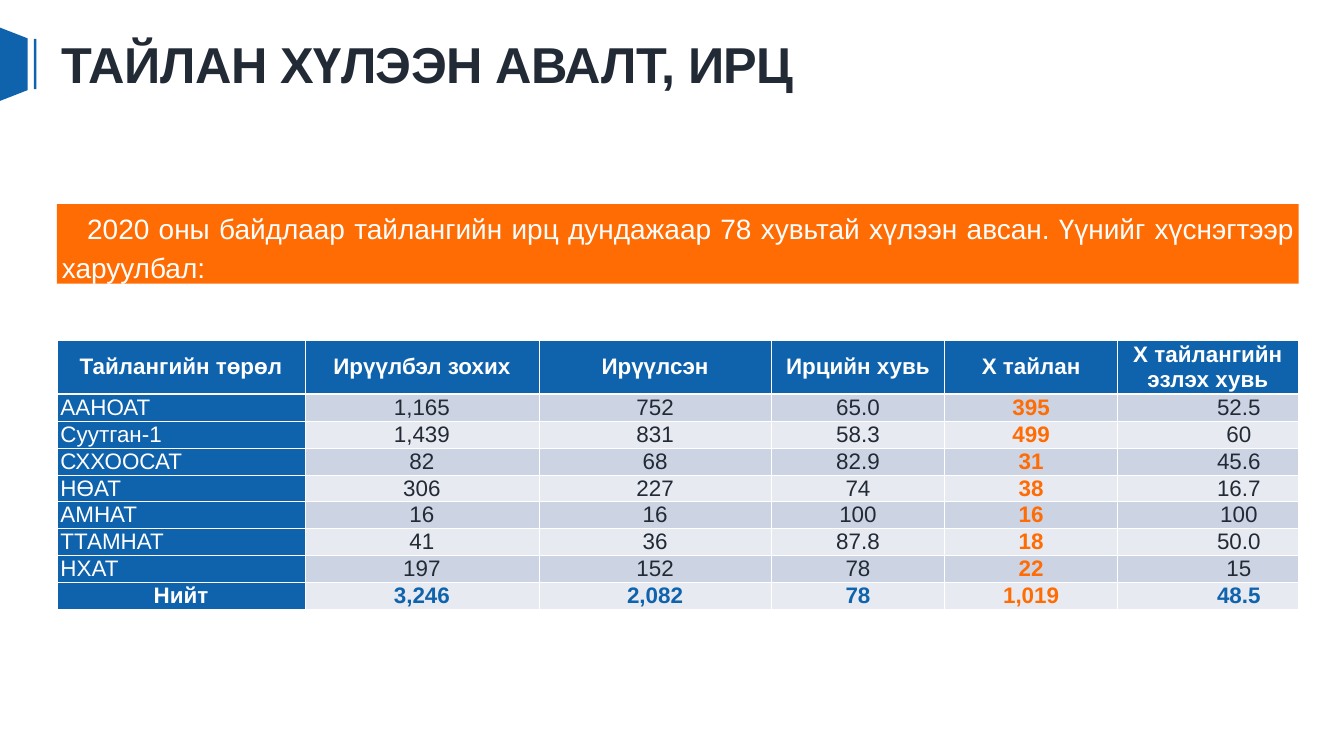
import pptx
import pptx.dml.color
import pptx.enum.shapes
import pptx.enum.text
import pptx.oxml.ns
import pptx.util
from lxml import etree
from pptx.util import Inches

RGBColor = pptx.dml.color.RGBColor
SHAPE = pptx.enum.shapes.MSO_SHAPE
ALIGN = pptx.enum.text.PP_ALIGN
ANCHOR = pptx.enum.text.MSO_ANCHOR

BLUE = RGBColor(0x0F, 0x62, 0xAC)
ORANGE = RGBColor(0xFF, 0x6C, 0x04)
DARK = RGBColor(0x22, 0x2A, 0x35)
WHITE = RGBColor(0xFF, 0xFF, 0xFF)
BAND_DARK = RGBColor(0xCC, 0xD3, 0xE3)
BAND_LIGHT = RGBColor(0xE7, 0xEA, 0xF1)

LEFT, WIDTH = Inches(1.13), Inches(24.63)
COLUMN_WIDTHS = [4.92, 4.64, 4.61, 3.44, 3.43, 3.58]
HEADER_HEIGHT, ROW_HEIGHT = 1.07, 0.53
ROWS = [
    ["Тайлангийн төрөл", "Ирүүлбэл зохих", "Ирүүлсэн", "Ирцийн хувь", "Х тайлан",
     "Х тайлангийн эзлэх хувь"],
    ["ААНОАТ", "1,165", "752", "65.0", "395", "52.5"],
    ["Суутган-1", "1,439", "831", "58.3", "499", "60"],
    ["СХХООСАТ", "82", "68", "82.9", "31", "45.6"],
    ["НӨАТ", "306", "227", "74", "38", "16.7"],
    ["АМНАТ", "16", "16", "100", "16", "100"],
    ["ТТАМНАТ", "41", "36", "87.8", "18", "50.0"],
    ["НХАТ", "197", "152", "78", "22", "15"],
    ["Нийт", "3,246", "2,082", "78", "1,019", "48.5"],
]
TOTAL_ROW = len(ROWS) - 1
X_COLUMN, LAST_COLUMN = 4, 5


def add_span(para, text, size, color, bold=False):
    span = para.add_run()
    span.text = text
    span.font.name = "Arial"
    span.font.size = pptx.util.Pt(size)
    span.font.bold = bold
    span.font.color.rgb = color
    return span


def add_cell_border(cell, side, points):
    """Draw a white line on one side (L, R, T or B); call before filling the cell."""
    tag = pptx.oxml.ns.qn
    line = etree.SubElement(cell._tc.get_or_add_tcPr(), tag(f"a:ln{side}"),
                            w=str(pptx.util.Pt(points)))
    fill = etree.SubElement(line, tag("a:solidFill"))
    etree.SubElement(fill, tag("a:srgbClr"), val=str(WHITE))


deck = pptx.Presentation()
deck.slide_width, deck.slide_height = Inches(26.66), Inches(15)
page = deck.slides.add_slide(deck.slide_layouts[6])

# Title marker and banner
bar = page.shapes.add_shape(SHAPE.RECTANGLE, Inches(0.67), Inches(0.77), Inches(0.05), Inches(1))
wedge = page.shapes.add_shape(SHAPE.TRAPEZOID, Inches(-0.47), Inches(0.99),
                              Inches(1.47), Inches(0.57))
wedge.rotation = 90
wedge.adjustments[0] = 0.39
banner = page.shapes.add_shape(SHAPE.RECTANGLE, LEFT, Inches(4.05), WIDTH, Inches(1.58))
for shape, color in [(bar, BLUE), (wedge, BLUE), (banner, ORANGE)]:
    shape.shadow.inherit = False
    shape.fill.solid()
    shape.fill.fore_color.rgb = color
    shape.line.fill.background()

banner.text_frame.word_wrap = True
banner.text_frame.vertical_anchor = ANCHOR.TOP
para = banner.text_frame.paragraphs[0]
para.alignment = ALIGN.JUSTIFY
para.line_spacing = 1.15
para.space_before, para.space_after = pptx.util.Pt(6), pptx.util.Pt(10)
para._p.get_or_add_pPr().set("indent", str(Inches(0.5)))
add_span(para, "2020 оны байдлаар тайлангийн ирц дундажаар 78 хувьтай хүлээн авсан. "
               "Үүнийг хүснэгтээр харуулбал:", 40, WHITE)

# Title
title = page.shapes.add_textbox(LEFT, Inches(0.74), WIDTH, Inches(1.19))
title.text_frame.word_wrap = True
title.text_frame.vertical_anchor = ANCHOR.MIDDLE
para = title.text_frame.paragraphs[0]
para.line_spacing = 0.9
span = add_span(para, "ТАЙЛАН ХҮЛЭЭН АВАЛТ, ИРЦ", 72, DARK, bold=True)
span._r.get_or_add_rPr().set("spc", "-80")

# Attendance table
table_height = HEADER_HEIGHT + ROW_HEIGHT * TOTAL_ROW
table = page.shapes.add_table(len(ROWS), len(COLUMN_WIDTHS), LEFT, Inches(6.75),
                              WIDTH, Inches(table_height)).table
for column, width in zip(table.columns, COLUMN_WIDTHS):
    column.width = Inches(width)

for r, values in enumerate(ROWS):
    table.rows[r].height = Inches(ROW_HEIGHT if r else HEADER_HEIGHT)
    for c, value in enumerate(values):
        cell = table.cell(r, c)
        header = r == 0 or c == 0
        cell.vertical_anchor = ANCHOR.MIDDLE
        cell.margin_top = cell.margin_bottom = 0
        cell.margin_left = cell.margin_right = Inches(0.07)
        if c == LAST_COLUMN and not header:
            cell.margin_left = Inches(1.3)

        for side in "LRTB":
            under_header = (r, side) in [(0, "B"), (1, "T")]
            add_cell_border(cell, side, 3 if under_header else 1)
        cell.fill.solid()
        cell.fill.fore_color.rgb = BLUE if header else BAND_DARK if r % 2 else BAND_LIGHT

        if header:
            color = WHITE
        elif c == X_COLUMN:
            color = ORANGE
        else:
            color = BLUE if r == TOTAL_ROW else DARK
        bold = r in (0, TOTAL_ROW) or c == X_COLUMN
        para = cell.text_frame.paragraphs[0]
        para.alignment = ALIGN.CENTER if c or bold else ALIGN.LEFT
        para.space_after = pptx.util.Pt(10)
        add_span(para, value, 32, color, bold)

deck.save("out.pptx")
